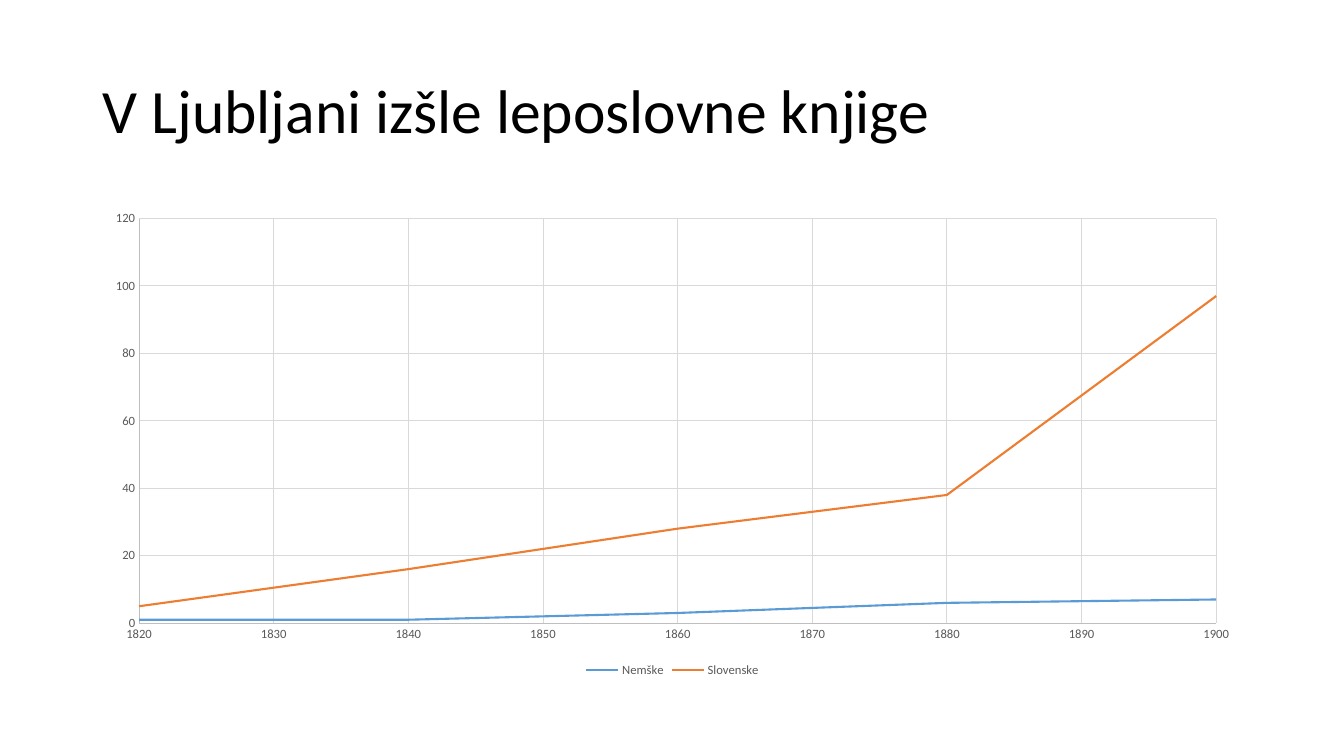
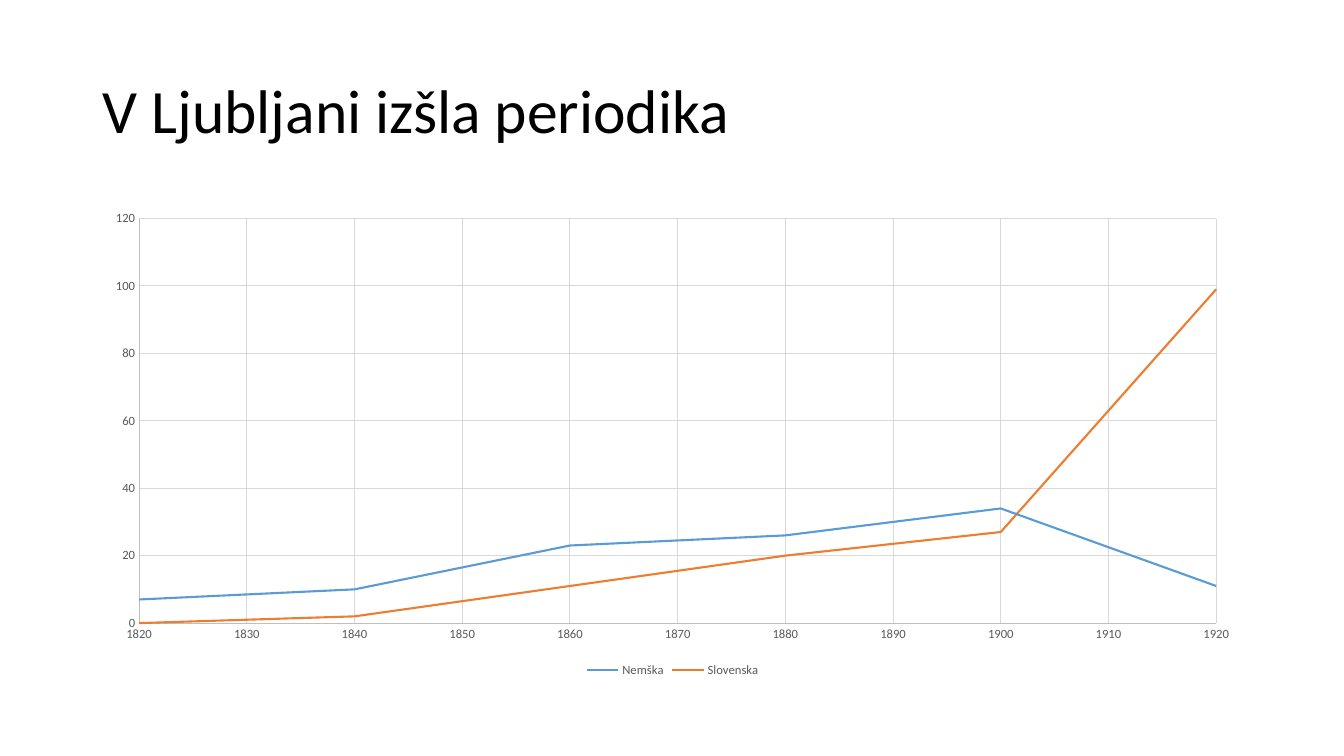
from dataclasses import dataclass

from pptx import Presentation
from pptx.chart.data import XyChartData
from pptx.dml.color import RGBColor
from pptx.enum import chart as ch, text as tx
from pptx.util import Inches, Pt

SLIDES = [
    {
        "title": "V Ljubljani izšle leposlovne knjige",
        "years": range(1820, 1901, 20),
        "counts": {
            "Nemške": (1, 1, 3, 6, 7),
            "Slovenske": (5, 16, 28, 38, 97),
        },
    },
    {
        "title": "V Ljubljani izšla periodika",
        "years": range(1820, 1921, 20),
        "counts": {
            "Nemška": (7, 10, 23, 26, 34, 11),
            "Slovenska": (0, 2, 11, 20, 27, 99),
        },
    },
]


@dataclass(frozen=True)
class Theme:
    font: str = "Calibri"
    title_size: int = 44
    chart_size: int = 10
    label_size: int = 9
    hairline: float = 0.75
    curve: float = 1.5
    ink: str = "000000"
    label: str = "595959"
    axis: str = "BFBFBF"
    grid: str = "D9D9D9"
    curves: tuple = ("5B9BD5", "ED7D31")


THEME = Theme()
TITLE_BOX = [Inches(n) for n in (0.92, 0.4, 11.5, 1.45)]
CHART_BOX = [Inches(n) for n in (0.92, 2, 11.5, 4.76)]


def style_font(font, size, color):
    font.name = THEME.font
    font.size = Pt(size)
    font.color.rgb = RGBColor.from_string(color)


def style_line(line, color, width):
    line.color.rgb = RGBColor.from_string(color)
    line.width = Pt(width)


def add_text(slide, box, wording, *, size, color, spacing=1.0,
             anchor=tx.MSO_ANCHOR.MIDDLE):
    frame = slide.shapes.add_textbox(*box).text_frame
    frame.word_wrap = True
    frame.vertical_anchor = anchor
    paragraph = frame.paragraphs[0]
    paragraph.line_spacing = spacing
    run = paragraph.add_run()
    run.text = wording
    style_font(run.font, size, color)


def style_axis(axis, low, high, step):
    axis.minimum_scale = low
    axis.maximum_scale = high
    axis.major_unit = step
    axis.major_tick_mark = axis.minor_tick_mark = ch.XL_TICK_MARK.NONE
    axis.has_major_gridlines = True
    style_line(axis.major_gridlines.format.line, THEME.grid, THEME.hairline)
    style_line(axis.format.line, THEME.axis, THEME.hairline)
    style_font(axis.tick_labels.font, THEME.label_size, THEME.label)


def add_curves(slide, years, counts):
    data = XyChartData()
    for language, values in counts.items():
        series = data.add_series(language)
        for year, value in zip(years, values):
            series.add_data_point(year, value)

    kind = ch.XL_CHART_TYPE.XY_SCATTER_SMOOTH_NO_MARKERS
    chart = slide.shapes.add_chart(kind, *CHART_BOX, data).chart
    chart.has_title = False
    style_font(chart.font, THEME.chart_size, THEME.ink)

    style_axis(chart.category_axis, years[0], years[-1], 10)
    style_axis(chart.value_axis, 0, 120, 20)

    chart.has_legend = True
    chart.legend.position = ch.XL_LEGEND_POSITION.BOTTOM
    chart.legend.include_in_layout = False
    style_font(chart.legend.font, THEME.label_size, THEME.label)

    plot = chart.plots[0]
    plot.vary_by_categories = False
    for series, color in zip(plot.series, THEME.curves):
        series.marker.style = ch.XL_MARKER_STYLE.NONE
        style_line(series.format.line, color, THEME.curve)


def main():
    deck = Presentation()
    deck.slide_width = Inches(13.33)
    deck.slide_height = Inches(7.5)
    blank = deck.slide_layouts[6]
    for content in SLIDES:
        slide = deck.slides.add_slide(blank)
        add_text(slide, TITLE_BOX, content["title"], size=THEME.title_size,
                 color=THEME.ink, spacing=0.9)
        add_curves(slide, content["years"], content["counts"])
    deck.save("out.pptx")


if __name__ == "__main__":
    main()
